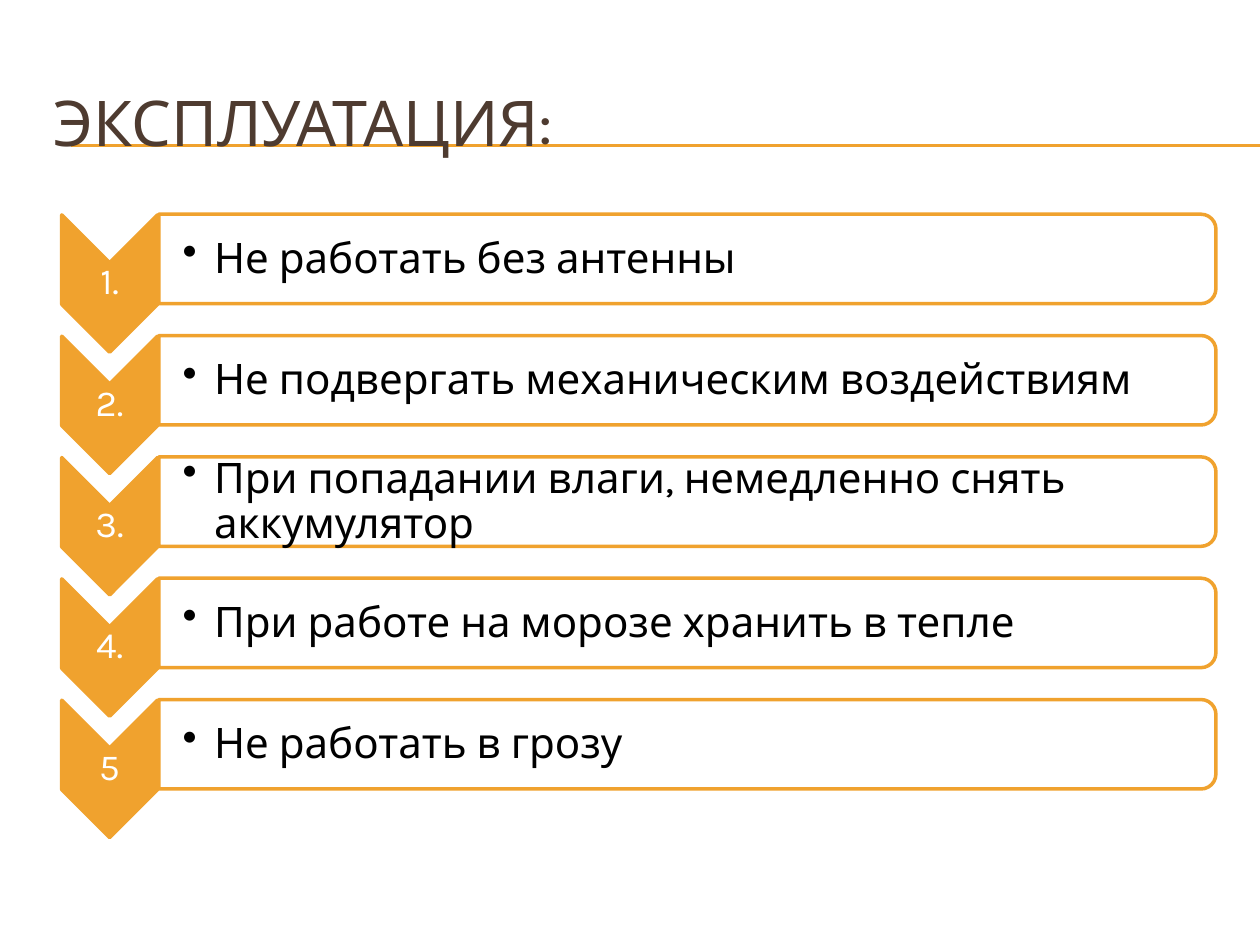
from lxml import etree
from pptx import Presentation
from pptx.dml.color import RGBColor
from pptx.enum.shapes import MSO_CONNECTOR, MSO_SHAPE
from pptx.enum.text import MSO_ANCHOR, PP_ALIGN
from pptx.oxml.ns import qn
from pptx.util import Inches, Pt

LINE = MSO_CONNECTOR.STRAIGHT
CHEVRON = MSO_SHAPE.CHEVRON
PANEL = MSO_SHAPE.ROUND_2_SAME_RECTANGLE
MIDDLE = MSO_ANCHOR.MIDDLE
LEFT, CENTER = PP_ALIGN.LEFT, PP_ALIGN.CENTER

ORANGE = RGBColor(0xF0, 0xA2, 0x2E)
BROWN = RGBColor(0x4E, 0x3B, 0x30)
WHITE = RGBColor(0xFF, 0xFF, 0xFF)
BLACK = RGBColor(0, 0, 0)

RULES = (
    ("1.", "Не работать без антенны"),
    ("2.", "Не подвергать механическим воздействиям"),
    ("3.", "При попадании влаги, немедленно снять аккумулятор"),
    ("4.", "При работе на морозе хранить в тепле"),
    ("5", "Не работать в грозу"),
)
TOP, STEP = 1.7, 0.963


class Deck:
    font = "Karla"

    def __init__(self, slide):
        self.slide = slide

    def rule(self, left, right, y):
        line = self.slide.shapes.add_connector(
            LINE, Inches(left), Inches(y), Inches(right), Inches(y))
        line.line.color.rgb = ORANGE
        line.line.width = Pt(0.75)
        etree.SubElement(line._element.spPr, qn("a:effectLst"))

    def turned(self, kind, mid, size, fill, alpha=None):
        """Add a shape of the given unturned size, turned 90° about mid."""
        (x, y), (width, height) = mid, size
        shape = self.slide.shapes.add_shape(
            kind, Inches(x - width / 2), Inches(y - height / 2),
            Inches(width), Inches(height))
        shape.rotation = 90
        shape.shadow.inherit = False
        shape.fill.solid()
        shape.fill.fore_color.rgb = fill
        shape.line.color.rgb = ORANGE
        shape.line.width = Pt(2)
        if alpha:
            color = shape._element.spPr.find(qn("a:solidFill"))[0]
            etree.SubElement(color, qn("a:alpha"), val=str(alpha * 1000))

    def text(self, words, at, size, color, align=LEFT, pads=None,
             spacing=None, bullet=False):
        """Add one paragraph; pads are left, top, right, bottom insets."""
        box = self.slide.shapes.add_textbox(*map(Inches, at))
        frame = box.text_frame
        frame.word_wrap = True
        frame.vertical_anchor = MIDDLE
        if pads:
            for side, pad in zip(("left", "top", "right", "bottom"), pads):
                setattr(frame, f"margin_{side}", Inches(pad))
        para = frame.paragraphs[0]
        if bullet:
            para.level = 1
            props = para._p.get_or_add_pPr()
            props.set("marL", str(Inches(0.25)))
            props.set("indent", str(-Inches(0.25)))
            etree.SubElement(props, qn("a:buChar"), char="•")
        para.alignment = align
        if spacing:
            para.line_spacing = spacing
        run = para.add_run()
        run.text = words
        look = {"name": self.font, "size": Pt(size)}
        for key, value in look.items():
            setattr(run.font, key, value)
        run.font.color.rgb = color

    def item(self, top, mark, words):
        self.turned(CHEVRON, (0.87, top + 0.55), (1.09, 0.76), ORANGE)
        self.text(mark, (0.49, top + 0.38, 0.76, 0.33), 21, WHITE,
                  CENTER, (0.01,) * 4, 0.9)
        self.turned(PANEL, (5.455, top + 0.355), (0.71, 8.39), WHITE, 90)
        self.text(words, (1.26, top + 0.04, 8.36, 0.64), 24, BLACK,
                  LEFT, (0.19, 0.02, 0.02, 0.02), 0.9, True)


def main():
    prs = Presentation()
    prs.slide_width, prs.slide_height = Inches(10), Inches(7.5)
    deck = Deck(prs.slides.add_slide(prs.slide_layouts[6]))
    for y in (1.15, 1.16):
        deck.rule(0.56, 10, y)
    deck.text("ЭКСПЛУАТАЦИЯ:", (0.33, 0.5, 9.5, 0.92), 36, BROWN)
    for row, (mark, words) in enumerate(RULES):
        deck.item(TOP + row * STEP, mark, words)
    prs.save("out.pptx")


if __name__ == "__main__":
    main()
